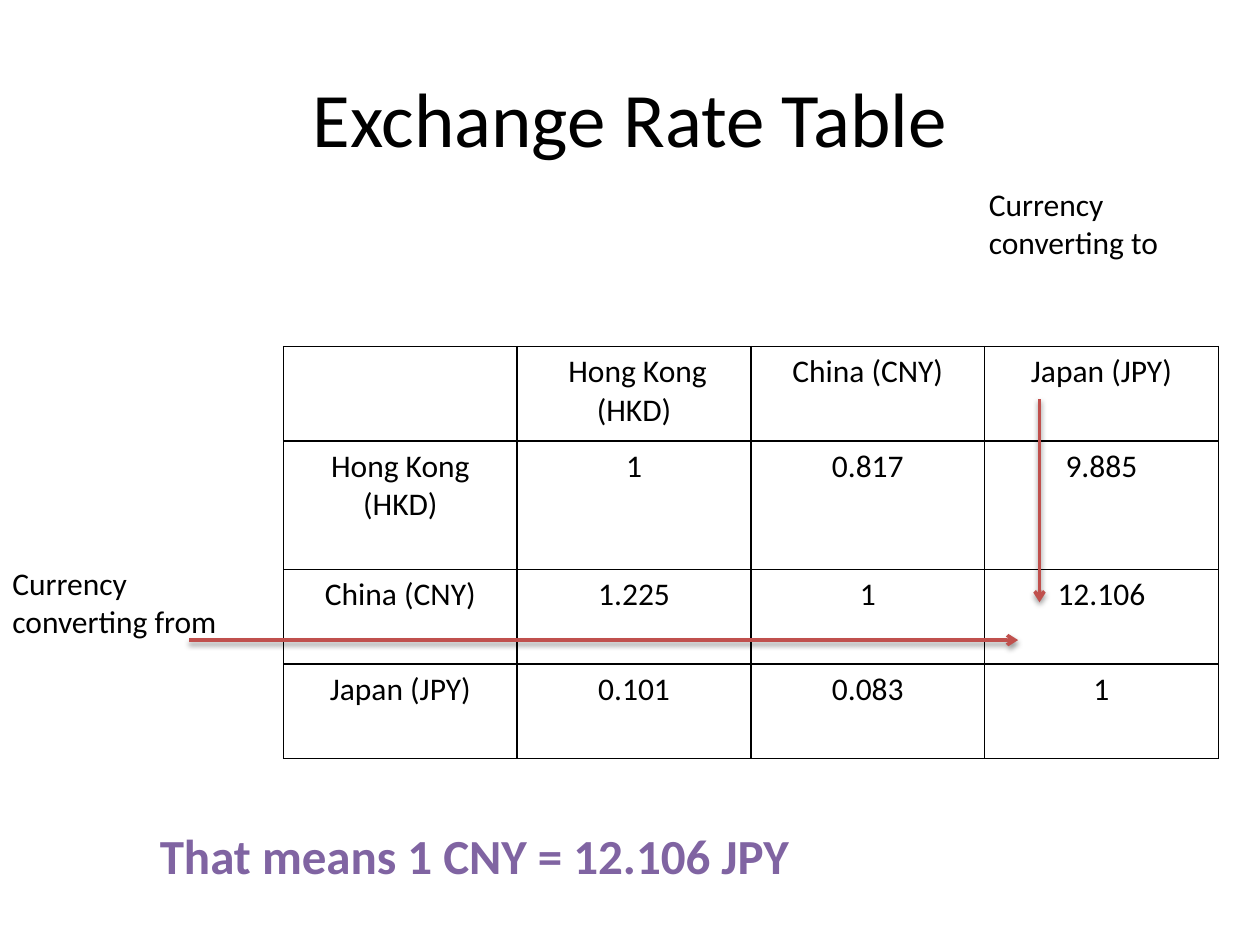
import pptx
import pptx.util
import pptx.dml.color
import pptx.enum.shapes
import pptx.enum.text
import pptx.oxml
import pptx.oxml.ns
from dataclasses import dataclass

Inches = pptx.util.Inches
Pt = pptx.util.Pt
Align = pptx.enum.text.PP_ALIGN
Anchor = pptx.enum.text.MSO_ANCHOR


@dataclass(frozen=True)
class Theme:
    font: str = "Calibri"
    ink: str = "000000"
    arrow: str = "C0504D"
    accent: str = "8064A2"
    title: int = 44
    body: int = 18
    result: int = 28


THEME = Theme()

RATES = [
    ["", " Hong Kong (HKD)", "China (CNY)", "Japan (JPY)"],
    ["Hong Kong (HKD)", "1", "0.817", "9.885"],
    ["China (CNY)", "1.225", "1", "12.106"],
    ["Japan (JPY)", "0.101", "0.083", "1"],
]
HEIGHTS = [0.75, 1.02, 0.75, 0.75]


def make_xml(text):
    return pptx.oxml.parse_xml(text.replace(">", f" {pptx.oxml.ns.nsdecls('a')}>", 1))


def add_run(para, text, size, color=THEME.ink, bold=False):
    run = para.add_run()
    run.text = text
    font = run.font
    font.name = THEME.font
    font.size = Pt(size)
    font.bold = bold
    font.color.rgb = pptx.dml.color.RGBColor.from_string(color)


def add_label(slide, box, text, size, color=THEME.ink, bold=False,
              align=Align.LEFT, anchor=Anchor.TOP):
    frame = slide.shapes.add_textbox(*map(Inches, box)).text_frame
    frame.word_wrap = True
    frame.vertical_anchor = anchor
    para = frame.paragraphs[0]
    para.alignment = align
    add_run(para, text, size, color, bold)


def add_border(cell):
    props = cell._tc.get_or_add_tcPr()
    for side in "LRTB":
        props.append(make_xml(
            f'<a:ln{side} w="{Pt(1)}"><a:solidFill><a:srgbClr val="{THEME.ink}"/>'
            f'</a:solidFill></a:ln{side}>'))


def add_rates(slide, left, top, width):
    shape = slide.shapes.add_table(
        len(RATES), len(RATES[0]), Inches(left), Inches(top),
        Inches(width), Inches(sum(HEIGHTS)))
    table = shape.table
    table.first_row = table.horz_banding = False
    for row, height, texts in zip(table.rows, HEIGHTS, RATES):
        row.height = Inches(height)
        for cell, text in zip(row.cells, texts):
            add_border(cell)
            cell.fill.background()
            para = cell.text_frame.paragraphs[0]
            para.alignment = Align.CENTER
            if text:
                add_run(para, text, THEME.body)


def add_arrow(slide, start, end):
    """Draw a line with an open head at its end and a soft shadow below."""
    line = slide.shapes.add_connector(
        pptx.enum.shapes.MSO_CONNECTOR.STRAIGHT, *map(Inches, start + end))
    line.line.width = Pt(2)
    line.line.color.rgb = pptx.dml.color.RGBColor.from_string(THEME.arrow)
    line.line._get_or_add_ln().append(make_xml('<a:tailEnd type="arrow"></a:tailEnd>'))
    line._element.spPr.append(make_xml(
        f'<a:effectLst><a:outerShdw blurRad="{Pt(3.1)}" dist="{Pt(1.6)}" '
        f'dir="5400000" rotWithShape="0"><a:srgbClr val="{THEME.ink}">'
        '<a:alpha val="38000"/></a:srgbClr></a:outerShdw></a:effectLst>'))


def main():
    deck = pptx.Presentation()
    deck.slide_width, deck.slide_height = Inches(10), Inches(7.5)
    slide = deck.slides.add_slide(deck.slide_layouts[6])

    add_label(slide, (0.5, 0.3, 9, 1.25), "Exchange Rate Table", THEME.title,
              align=Align.CENTER, anchor=Anchor.MIDDLE)
    add_rates(slide, 2.25, 2.75, 7.42)
    add_label(slide, (0, 4.43, 1.92, 0.71), "Currency converting from", THEME.body)
    add_arrow(slide, (1.5, 5.08), (8.08, 5.08))
    add_label(slide, (7.75, 1.42, 2.04, 0.71), "Currency converting to", THEME.body)
    add_arrow(slide, (8.25, 3.17), (8.25, 4.78))
    add_label(slide, (1.17, 6.5, 8.17, 0.57), "That means 1 CNY = 12.106 JPY",
              THEME.result, THEME.accent, bold=True)

    deck.save("out.pptx")


if __name__ == "__main__":
    main()
